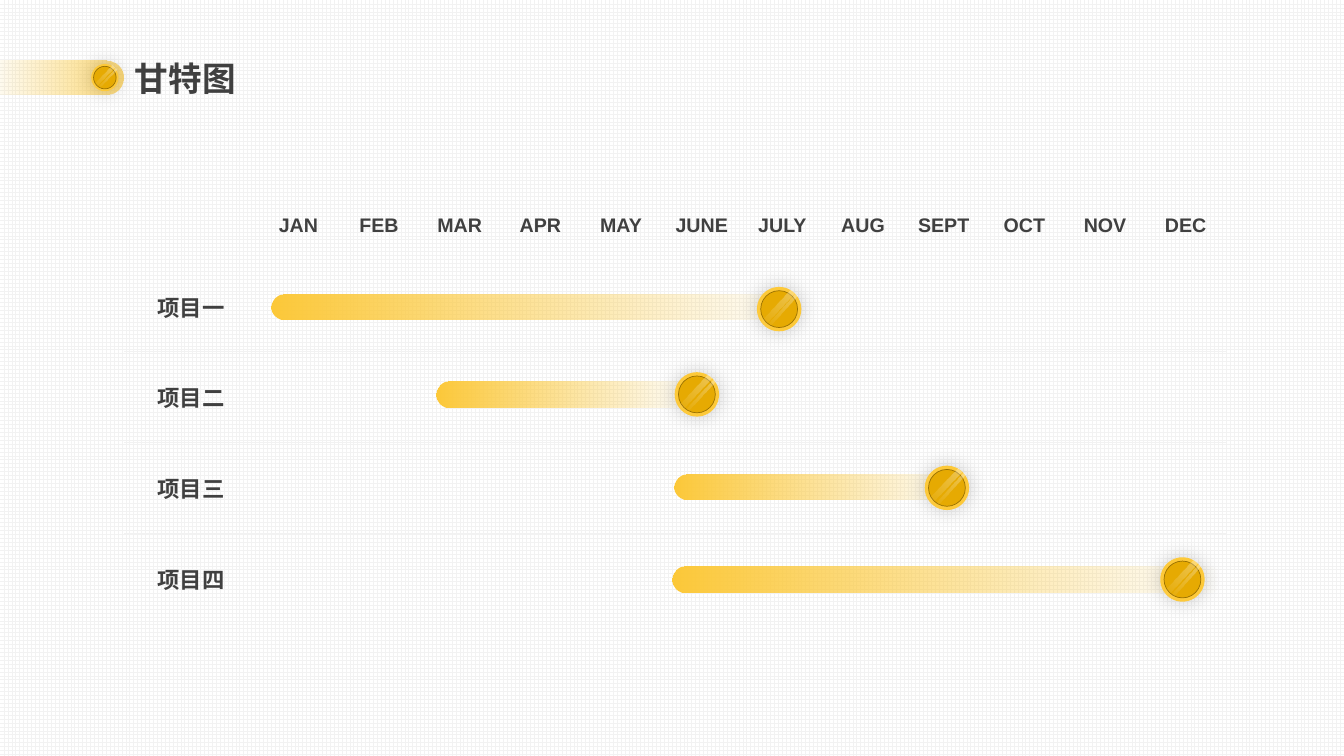
from dataclasses import dataclass

from lxml import etree
from pptx import Presentation
from pptx.dml.color import RGBColor
from pptx.enum.dml import MSO_PATTERN
from pptx.enum.shapes import MSO_SHAPE
from pptx.enum.text import MSO_ANCHOR, MSO_AUTO_SIZE, PP_ALIGN
from pptx.oxml.ns import qn
from pptx.util import Inches, Pt

ROUND_BAR = MSO_SHAPE.ROUNDED_RECTANGLE
CIRCLE = MSO_SHAPE.OVAL
SLANT = MSO_SHAPE.PARALLELOGRAM
GRID_PATTERN = MSO_PATTERN.LARGE_GRID
MIDDLE = MSO_ANCHOR.MIDDLE
CENTER = PP_ALIGN.CENTER
GROW = MSO_AUTO_SIZE.SHAPE_TO_FIT_TEXT
PLAIN_TABLE = "{2D5ABB26-0587-4C30-8999-92F81FD0307C}"


@dataclass(frozen=True)
class Theme:
    font: str = "Arial"
    ink: str = "404040"
    gold: str = "FDC939"
    coin: str = "E6AA02"
    coin_edge: str = "997102"
    rule: str = "F2F2F2"
    white: str = "FFFFFF"
    shadow: str = "000000"
    title_size: int = 24
    month_size: int = 14
    project_size: int = 16
    hairline: float = 0.5


THEME = Theme()

# Month grid, in inches
TABLE_LEFT, TABLE_TOP = 1.23, 1.88
LABEL_WIDTH, MONTH_WIDTH = 1.33, 0.8
HEADER_HEIGHT, ROW_HEIGHT = 0.71, 0.9
BAR_HEIGHT, COIN_SIZE = 0.25, 0.44

MONTHS = ["JAN", "FEB", "MAR", "APR", "MAY", "JUNE",
          "JULY", "AUG", "SEPT", "OCT", "NOV", "DEC"]

# Name, bar start and length in months, bar row, coin month, coin row
PROJECTS = [
    ("项目一", 0.16, 6.58, 0.51, 6.46, 0.53),
    ("项目二", 2.21, 3.21, 1.47, 5.44, 1.47),
    ("项目三", 5.16, 3.58, 2.49, 8.54, 2.50),
    ("项目四", 5.14, 6.80, 3.51, 11.46, 3.51),
]

# Shine on a coin, as shares of its size: offset x, offset y, width, height
SHINES = [(0.05, 0.05, 0.09, 1.0), (-0.06, -0.03, 0.16, 1.02)]


def color(value):
    return RGBColor.from_string(value)


def month_x(months):
    return TABLE_LEFT + LABEL_WIDTH + months * MONTH_WIDTH


def row_y(rows):
    return TABLE_TOP + HEADER_HEIGHT + rows * ROW_HEIGHT


def add_centred(shapes, preset, x, y, width, height):
    """Add a preset shape without line or shadow around a centre point."""
    shape = shapes.add_shape(preset, Inches(x - width / 2), Inches(y - height / 2),
                             Inches(width), Inches(height))
    shape.shadow.inherit = False
    shape.line.fill.background()
    return shape


def fade(shape, value, angle, opacities):
    """Fill with one colour that runs between two opacities in percent."""
    shape.fill.gradient()
    shape.fill.gradient_angle = angle
    for stop, position in zip(shape.fill.gradient_stops, (0, 1)):
        stop.color.rgb = color(value)
        stop.position = position
    for node, opacity in zip(shape._element.spPr.iter(qn("a:srgbClr")), opacities):
        etree.SubElement(node, qn("a:alpha"), val=str(opacity * 1000))


def fill_solid(shape, value):
    shape.fill.solid()
    shape.fill.fore_color.rgb = color(value)


def add_glow_shadow(shape):
    effects = shape._element.spPr.find(qn("a:effectLst"))
    outer = etree.SubElement(effects, qn("a:outerShdw"), blurRad=str(Pt(15)),
                             dist="0", dir="0", algn="ctr", rotWithShape="0")
    tint = etree.SubElement(outer, qn("a:srgbClr"), val=THEME.shadow)
    etree.SubElement(tint, qn("a:alpha"), val="20000")


def add_bar(page, x, y, width, height, angle, opacity):
    bar = add_centred(page.shapes, ROUND_BAR, x + width / 2, y, width, height)
    bar.adjustments[0] = 0.5
    fade(bar, THEME.gold, angle, (opacity, 0))


def add_coin(page, x, y, size):
    shapes = page.shapes.add_group_shape().shapes
    rim = add_centred(shapes, CIRCLE, x, y, size, size)
    fill_solid(rim, THEME.gold)
    add_glow_shadow(rim)
    face = add_centred(shapes, CIRCLE, x, y, size * 0.83, size * 0.83)
    fill_solid(face, THEME.coin)
    face.line.color.rgb = color(THEME.coin_edge)
    face.line.width = Pt(THEME.hairline)
    for dx, dy, width, height in SHINES:
        shine = add_centred(shapes, SLANT, x + dx * size, y + dy * size,
                            width * size, height * size)
        shine.rotation = 41
        fade(shine, THEME.white, 90, (0, 33))


def write(para, text, size):
    span = para.add_run()
    span.text = text
    span.font.color.rgb = color(THEME.ink)
    formats = {"name": THEME.font, "size": Pt(size), "bold": True}
    for name, value in formats.items():
        setattr(span.font, name, value)


def add_title(page, text):
    box = page.shapes.add_textbox(Inches(1.24), Inches(0.52), Inches(1.21), Inches(0.5))
    frame = box.text_frame
    formats = {"word_wrap": False, "auto_size": GROW, "vertical_anchor": MIDDLE}
    for name, value in formats.items():
        setattr(frame, name, value)
    write(frame.paragraphs[0], text, THEME.title_size)


def write_cell(cell, text, size):
    cell.vertical_anchor = MIDDLE
    para = cell.text_frame.paragraphs[0]
    para.alignment = CENTER
    write(para, text, size)


def add_rule(cell, side):
    line = etree.Element(qn(f"a:{side}"), w=str(Pt(THEME.hairline)))
    fill = etree.SubElement(line, qn("a:solidFill"))
    etree.SubElement(fill, qn("a:srgbClr"), val=THEME.rule)
    props = cell._tc.get_or_add_tcPr()
    props.insert(len(props.findall(qn("a:lnT"))), line)


def add_month_table(page):
    row_count, column_count = len(PROJECTS) + 1, len(MONTHS) + 1
    frame = page.shapes.add_table(
        row_count, column_count, Inches(TABLE_LEFT), Inches(TABLE_TOP),
        Inches(LABEL_WIDTH + len(MONTHS) * MONTH_WIDTH),
        Inches(HEADER_HEIGHT + len(PROJECTS) * ROW_HEIGHT))
    table = frame.table
    table.first_row = table.horz_banding = False
    table._tbl.tblPr.find(qn("a:tableStyleId")).text = PLAIN_TABLE
    for index, column in enumerate(table.columns):
        column.width = Inches(MONTH_WIDTH if index else LABEL_WIDTH)
    for index, row in enumerate(table.rows):
        row.height = Inches(ROW_HEIGHT if index else HEADER_HEIGHT)
        for cell in row.cells:
            cell.fill.background()
            if index > 1:
                add_rule(cell, "lnT")
            if 0 < index < len(PROJECTS):
                add_rule(cell, "lnB")
    for index, month in enumerate(MONTHS, 1):
        cell = table.cell(0, index)
        for side in ("left", "right", "top"):
            setattr(cell, f"margin_{side}", Inches(0.01))
        cell.margin_bottom = 0
        write_cell(cell, month, THEME.month_size)
    for index, project in enumerate(PROJECTS, 1):
        write_cell(table.cell(index, 0), project[0], THEME.project_size)


def main():
    deck = Presentation()
    deck.slide_width, deck.slide_height = Inches(13.33), Inches(7.5)
    page = deck.slides.add_slide(deck.slide_layouts[6])

    # Squared paper background
    paper = page.background.fill
    paper.patterned()
    paper.pattern = GRID_PATTERN
    paper.fore_color.rgb = color(THEME.rule)
    paper.back_color.rgb = color(THEME.white)

    # Heading
    add_bar(page, -0.17, 0.77, 1.39, 0.34, 180, 67)
    add_coin(page, 1.04, 0.77, 0.27)
    add_title(page, "甘特图")

    # Gantt chart: grid, then bars, then the coins at their ends
    add_month_table(page)
    for _, start, length, bar_row, _, _ in PROJECTS:
        add_bar(page, month_x(start), row_y(bar_row), length * MONTH_WIDTH,
                BAR_HEIGHT, 0, 100)
    for *_, coin_month, coin_row in PROJECTS:
        add_coin(page, month_x(coin_month), row_y(coin_row), COIN_SIZE)

    deck.save("out.pptx")


if __name__ == "__main__":
    main()
